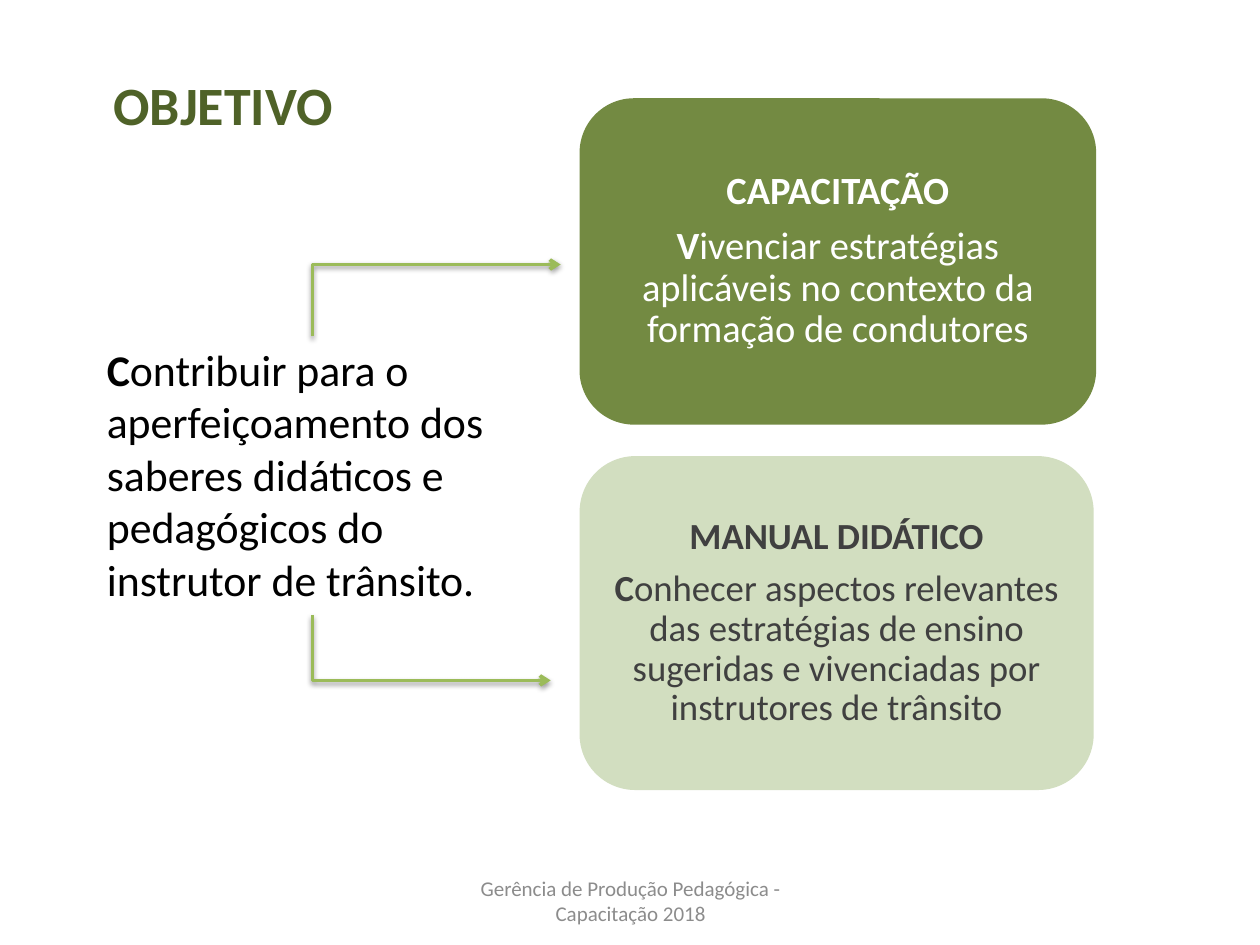
"""Builds the objective slide with two linked goal cards."""
from pptx import Presentation
from pptx.dml.color import RGBColor as Rgb
from pptx.enum.shapes import MSO_CONNECTOR as Link, MSO_SHAPE as Form
from pptx.enum.text import MSO_ANCHOR as Anchor, MSO_AUTO_SIZE as Fit, PP_ALIGN as Align
from pptx.oxml import parse_xml
from pptx.oxml.ns import nsdecls
from pptx.util import Inches, Pt

THEME = dict(title="4F6228", dark="738A42", light="D2DEC0", white="FFFFFF", ink="404040",
             black="000000", grey="8C8C8C", line="9BBB59",
             head=30.8, body=25, first=22, second=21, small=12)

TITLE = [[("OBJETIVO", True)]]
AIM = [[("C", True), ("ontribuir para o aperfeiçoamento dos saberes didáticos e "
                      "pedagógicos do instrutor de trânsito.", False)]]
FOOT = [[("Gerência de Produção Pedagógica - Capacitação 2018", False)]]
CARDS = [
    dict(box=(4.6, 0.78, 4.1, 2.59), fill="dark", ink="white", size="first", pad=0.05,
         text=[[("CAPACITAÇÃO", True)],
               [("V", True), ("ivenciar estratégias aplicáveis no contexto da "
                              "formação de condutores", False)]]),
    dict(box=(4.6, 3.62, 4.08, 2.65), fill="light", ink="ink", size="second", pad=0.04,
         text=[[("MANUAL DIDÁTICO", True)],
               [("C", True), ("onhecer aspectos relevantes das estratégias de ensino "
                              "sugeridas e vivenciadas por instrutores de trânsito", False)]]),
]
ARROWS = [((2.48, 4.88), (4.37, 5.4)), ((2.48, 2.67), (4.45, 2.1))]


def color(name):
    return Rgb.from_string(THEME[name])


def write(shape, text, size, ink, align=Align.LEFT, anchor=Anchor.TOP,
          pad=0.05, gap=0, lead=1.0):
    frame = shape.text_frame
    frame.word_wrap = True
    frame.auto_size = Fit.NONE
    frame.vertical_anchor = anchor
    frame.margin_left = frame.margin_right = Inches(0.09 if gap else 0.1)
    frame.margin_top = frame.margin_bottom = Inches(pad)
    for i, runs in enumerate(text):
        para = frame.add_paragraph() if i else frame.paragraphs[0]
        para.alignment = align
        para.line_spacing = lead
        para.space_before, para.space_after = Pt(0), Pt(gap)
        for words, bold in runs:
            run = para.add_run()
            run.text = words
            font = run.font
            font.name, font.size, font.bold = "Calibri", Pt(THEME[size]), bold
            font.color.rgb = color(ink)


def place(shape, box):
    shape.left, shape.top, shape.width, shape.height = map(Inches, box)


def add_card(shapes, card):
    shape = shapes.add_shape(Form.ROUNDED_RECTANGLE, *map(Inches, card["box"]))
    shape.shadow.inherit = False
    shape.fill.solid()
    shape.fill.fore_color.rgb = color(card["fill"])
    shape.line.fill.background()
    write(shape, card["text"], card["size"], card["ink"], align=Align.CENTER,
          anchor=Anchor.MIDDLE, pad=card["pad"], gap=Pt(THEME[card["size"]]).pt * 0.35, lead=0.9)


def add_arrow(shapes, start, end):
    (x1, y1), (x2, y2) = start, end
    mid_x, mid_y = (x1 + x2) / 2, (y1 + y2) / 2
    half_w, half_h = abs(y2 - y1) / 2, (x2 - x1) / 2
    side = 1 if y2 > y1 else -1
    link = shapes.add_connector(Link.ELBOW, Inches(mid_x + half_w), Inches(mid_y - side * half_h),
                                Inches(mid_x - half_w), Inches(mid_y + side * half_h))
    link.line.color.rgb = color("line")
    link.line.width = Pt(2)
    props = link._element.spPr
    props.xfrm.set("rot", str((270 if side > 0 else 90) * 60000))
    props.prstGeom.set("prst", "bentConnector2")
    props.ln.append(parse_xml(f'<a:tailEnd {nsdecls("a")} type="arrow"/>'))
    props.append(parse_xml(
        f'<a:effectLst {nsdecls("a")}><a:outerShdw blurRad="{Pt(3.1)}" dist="{Pt(1.6)}" '
        'dir="5400000" rotWithShape="0"><a:srgbClr val="000000"><a:alpha val="38000"/>'
        '</a:srgbClr></a:outerShdw></a:effectLst>'))


def main():
    deck = Presentation()
    deck.slide_width, deck.slide_height = Inches(10), Inches(7.5)
    slide = deck.slides.add_slide(deck.slide_layouts[5])
    shapes = slide.shapes
    place(shapes.title, (0.8, 0.52, 2.76, 0.51))
    write(shapes.title, TITLE, "head", "title")
    foot = shapes.add_textbox(*map(Inches, (3.42, 6.95, 3.17, 0.4)))
    write(foot, FOOT, "small", "grey", align=Align.CENTER, anchor=Anchor.MIDDLE)
    for card in CARDS:
        add_card(shapes, card)
    aim = shapes.add_textbox(*map(Inches, (0.75, 2.67, 3.46, 2.2)))
    write(aim, AIM, "body", "black")
    for start, end in ARROWS:
        add_arrow(shapes, start, end)
    deck.save("out.pptx")


if __name__ == "__main__":
    main()
